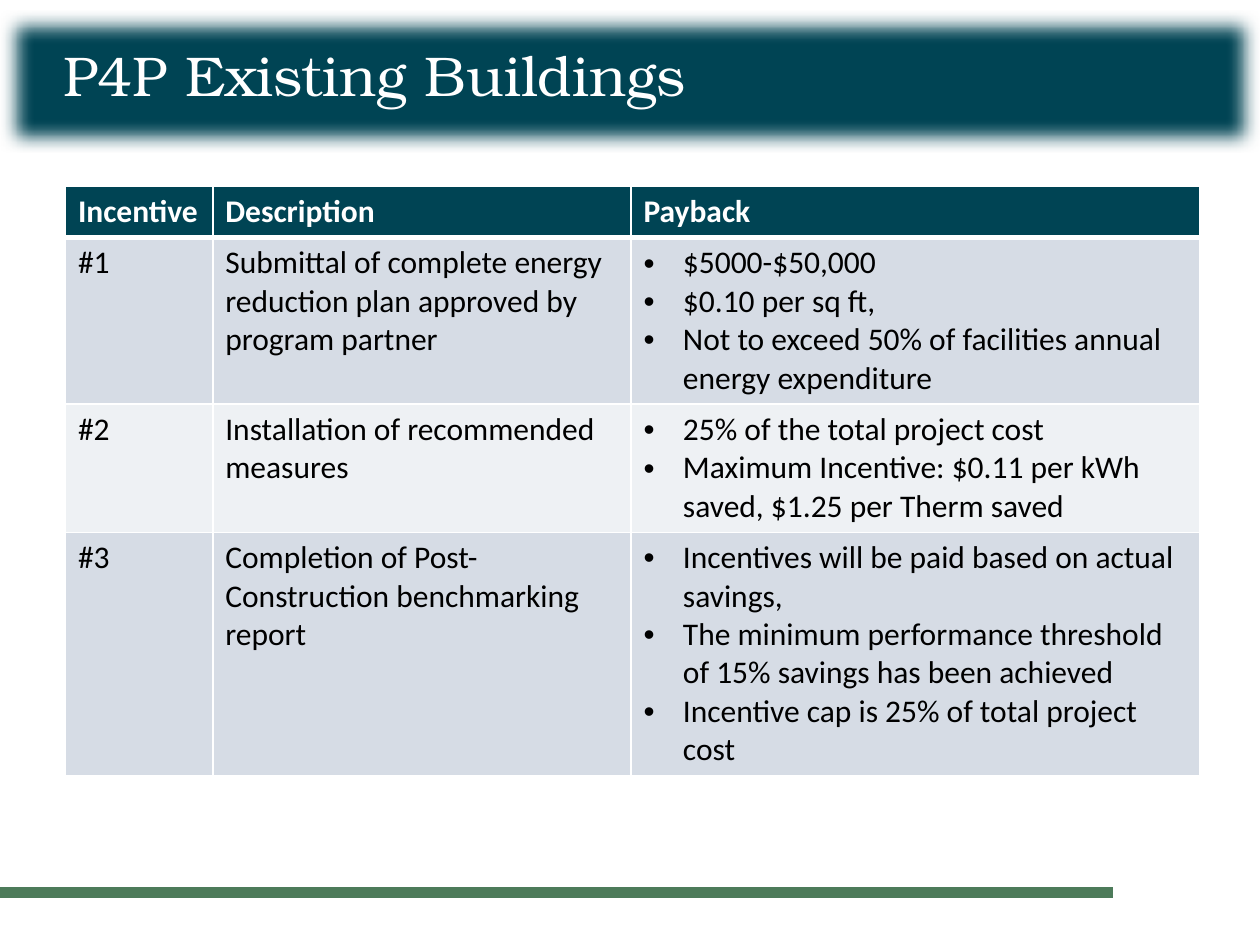
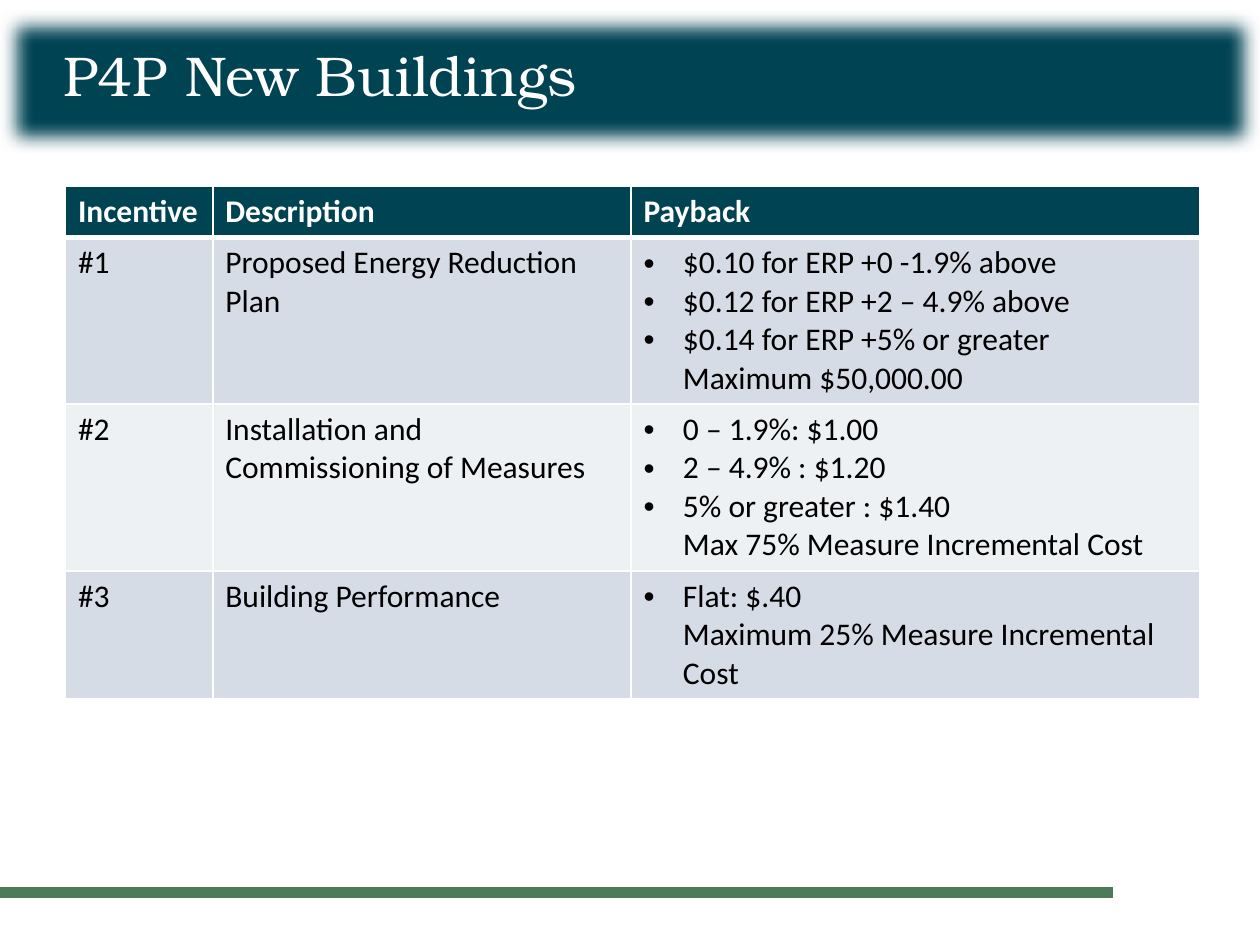
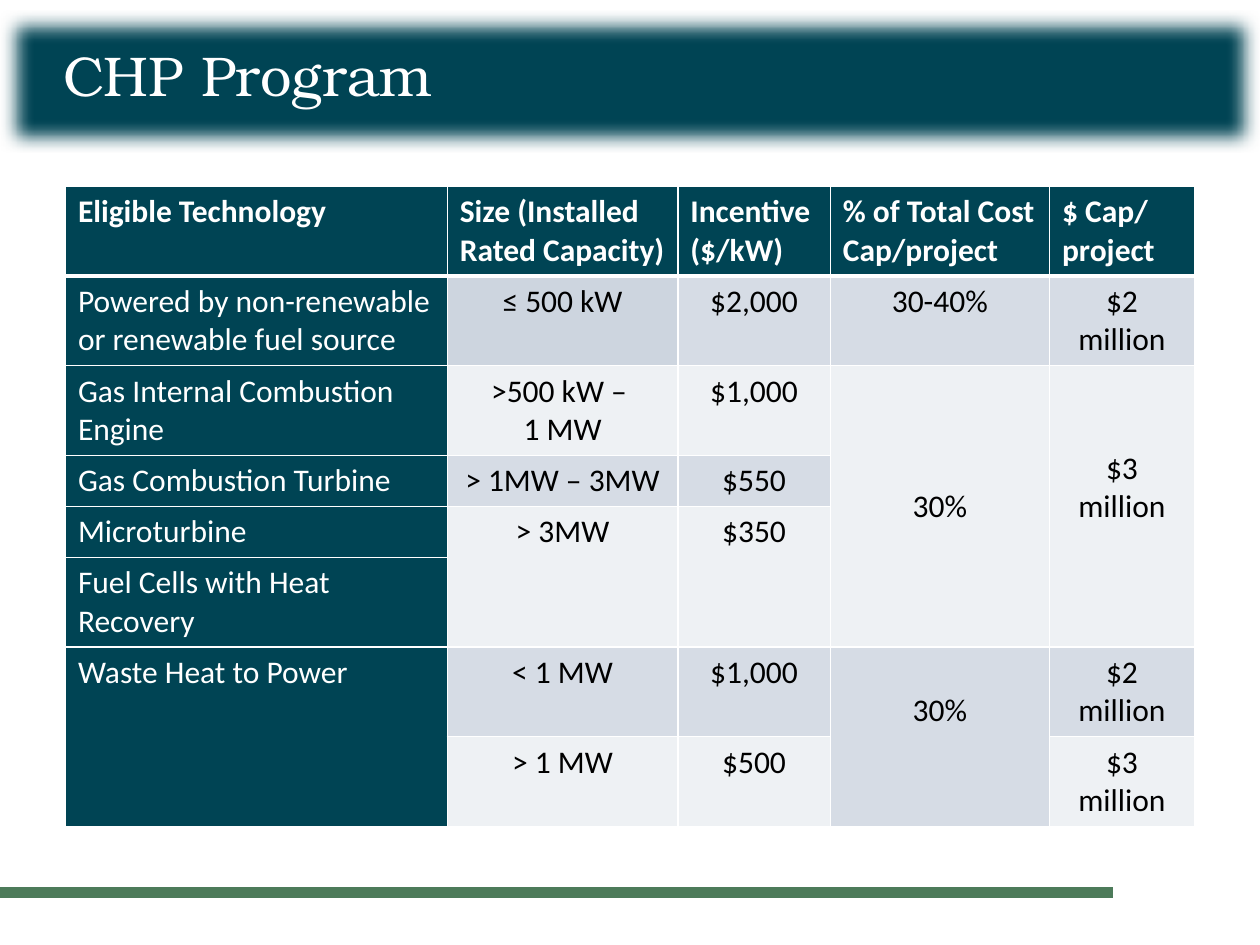
from lxml import etree
from pptx import Presentation
from pptx.dml.color import RGBColor
from pptx.enum import shapes, text
from pptx.oxml import ns
from pptx.util import Pt

# Content: None continues the cell above, a list is bulleted
HEAD = ["Incentive", "Description", "Payback"]
PLAN = dict(cols=[84.2, 239, 324.8], pale=[2])
DECK = [
    dict(PLAN, title="P4P Existing Buildings", lines=[1, 4, 3, 6], rows=[
        HEAD,
        ["#1", "Submittal of complete energy reduction plan approved by program partner",
         ["$5000-$50,000", "$0.10 per sq ft,",
          "Not to exceed 50% of facilities annual energy expenditure"]],
        ["#2", "Installation of recommended measures",
         ["25% of the total project cost",
          "Maximum Incentive: $0.11 per kWh saved, $1.25 per Therm saved"]],
        ["#3", "Completion of Post-Construction benchmarking report",
         ["Incentives will be paid based on actual savings,",
          "The minimum performance threshold of 15% savings has been achieved",
          "Incentive cap is 25% of total project cost"]],
    ]),
    dict(PLAN, title="P4P New Buildings", lines=[1, 4, 4, 3], rows=[
        HEAD,
        ["#1", "Proposed Energy Reduction Plan",
         ["$0.10 for ERP +0 -1.9% above", "$0.12 for ERP +2 – 4.9% above",
          "$0.14 for ERP +5% or greater\nMaximum $50,000.00"]],
        ["#2", "Installation and Commissioning of Measures",
         ["0 – 1.9%: $1.00", "2 – 4.9% : $1.20",
          "5% or greater : $1.40\nMax 75% Measure Incremental Cost"]],
        ["#3", "Building Performance",
         ["Flat: $.40\nMaximum 25% Measure Incremental Cost"]],
    ]),
    dict(title="CHP Program", cols=[218.2, 131.8, 87.1, 125.3, 82.8],
         lines=[2, 2, 2, 1, 1, 2, 2, 2], pale=[2, 4, 7], side=True,
         drop={(2, 3): 3, (2, 4): 2, (6, 3): 1}, slate=(1, 1), rows=[
        ["Eligible Technology", "Size (Installed Rated Capacity)", "Incentive ($/kW)",
         "% of Total Cost Cap/project", "$ Cap/ project"],
        ["Powered by non-renewable or renewable fuel source",
         "≤ 500 kW", "$2,000", "30-40%", "$2 million"],
        ["Gas Internal Combustion Engine", (">500 kW – ", "1 MW"), "$1,000",
         "30%", "$3 million"],
        ["Gas Combustion Turbine", "> 1MW – 3MW", "$550", None, None],
        ["Microturbine", "> 3MW", "$350", None, None],
        ["Fuel Cells with Heat Recovery", None, None, None, None],
        ["Waste Heat to Power", "< 1 MW", "$1,000", "30%", "$2 million"],
        [None, "> 1 MW", "$500", None, "$3 million"],
    ]),
]

# Shared look
TEAL, GREEN, MIST, SLATE = "004454", "4D7B5A", "D6DCE5", "8497B0"
WHITE, BLACK = "FFFFFF", "000000"
LINE, PAD = 22, 3.6
LEFT, TOP = 37.4, 106.6
CENTER = text.PP_ALIGN.CENTER


def rgb(code):
    return RGBColor.from_string(code)


def put(obj, **vals):
    for key, val in vals.items():
        setattr(obj, key, val)


def sub(node, tag, **vals):
    return etree.SubElement(node, ns.qn("a:" + tag), {k: str(v) for k, v in vals.items()})


def paint(shape, code, alpha=100):
    shape.fill.solid()
    shape.fill.fore_color.rgb = rgb(code)
    return alpha


def ink(para, face, size, code, bold=False):
    put(para.font, name=face, size=Pt(size), bold=bold)
    para.font.color.rgb = rgb(code)


def bullet(para):
    node = para._p.get_or_add_pPr()
    node.set("marL", str(Pt(22.5)))
    node.set("indent", str(-Pt(22.5)))
    sub(node, "buFont", typeface="Arial")
    sub(node, "buChar", char="•")


def fill(cell, code, alpha=100):
    cell.fill.solid()
    cell.fill.fore_color.rgb = rgb(code)
    if alpha < 100:
        tint = cell._tc.tcPr.find(".//" + ns.qn("a:srgbClr"))
        sub(tint, "alpha", val=alpha * 1000)


def edge(cell, row):
    # Borders come before the fill in the cell's properties
    props = cell._tc.get_or_add_tcPr()
    wide = {"T": 3 if row == 1 else 1, "B": 3 if row == 0 else 1}
    for spot, side in enumerate("LRTB"):
        line = sub(props, "ln" + side, w=Pt(wide.get(side, 1)))
        sub(sub(line, "solidFill"), "srgbClr", val=WHITE)
        props.insert(spot, line)


def frame(slide, name):
    # Title band with soft edges
    band = slide.shapes.title
    put(band, left=0, top=Pt(5.8), width=Pt(720), height=Pt(81.4))
    band.fill.solid()
    band.fill.fore_color.rgb = rgb(TEAL)
    sub(sub(band._element.spPr, "effectLst"), "softEdge", rad=Pt(10))
    box = band.text_frame
    put(box, text=name, word_wrap=True, auto_size=text.MSO_AUTO_SIZE.NONE,
        vertical_anchor=text.MSO_ANCHOR.MIDDLE, margin_left=Pt(36),
        margin_top=Pt(3.6), margin_right=Pt(7.2), margin_bottom=Pt(7.2))
    para = box.paragraphs[0]
    put(para, alignment=text.PP_ALIGN.LEFT, line_spacing=0.9)
    ink(para, "TeX Gyre Bonum", 32, WHITE)
    # Footer rule
    rule = slide.shapes.add_connector(
        shapes.MSO_CONNECTOR.STRAIGHT, 0, Pt(510), Pt(636), Pt(510))
    rule.line.color.rgb = rgb(GREEN)
    rule.line.width = Pt(6)
    sub(rule._element.spPr, "effectLst")


def write(cell, body, code, bold, align):
    parts = [body] if isinstance(body, str) else body
    box = cell.text_frame
    for num, part in enumerate(parts):
        para = box.add_paragraph() if num else box.paragraphs[0]
        put(para, text=part, alignment=align)
        if isinstance(body, list):
            bullet(para)
        ink(para, "Calibri", 18, code, bold)


def grid(slide, page):
    rows, cols = page["rows"], page["cols"]
    tall = [n * LINE + 2 * PAD for n in page["lines"]]
    table = slide.shapes.add_table(len(rows), len(cols), Pt(LEFT), Pt(TOP),
                                   Pt(sum(cols)), Pt(sum(tall))).table
    table.horz_banding = False
    for col, wide in zip(table.columns, cols):
        col.width = Pt(wide)
    for row, high in zip(table.rows, tall):
        row.height = Pt(high)
    side = page.get("side", False)
    for r, row in enumerate(rows):
        for c, body in enumerate(row):
            if body is None:
                continue
            cell = table.cell(r, c)
            last = r
            while last + 1 < len(rows) and rows[last + 1][c] is None:
                last += 1
            if last > r:
                cell.merge(table.cell(last, c))
            dark = r == 0 or (side and c == 0)
            write(cell, body, WHITE if dark else BLACK, r == 0,
                  CENTER if side and not dark else None)
            cell.margin_top = Pt(PAD + LINE * page.get("drop", {}).get((r, c), 0))
            if dark:
                fill(cell, TEAL)
            elif (r, c) == page.get("slate"):
                fill(cell, SLATE, 40)
            else:
                fill(cell, MIST, 40 if r in page["pale"] else 100)
            edge(cell, r)


def main():
    deck = Presentation()
    put(deck, slide_width=Pt(720), slide_height=Pt(540))
    for page in DECK:
        slide = deck.slides.add_slide(deck.slide_layouts[5])
        frame(slide, page["title"])
        grid(slide, page)
    deck.save("out.pptx")


if __name__ == "__main__":
    main()
